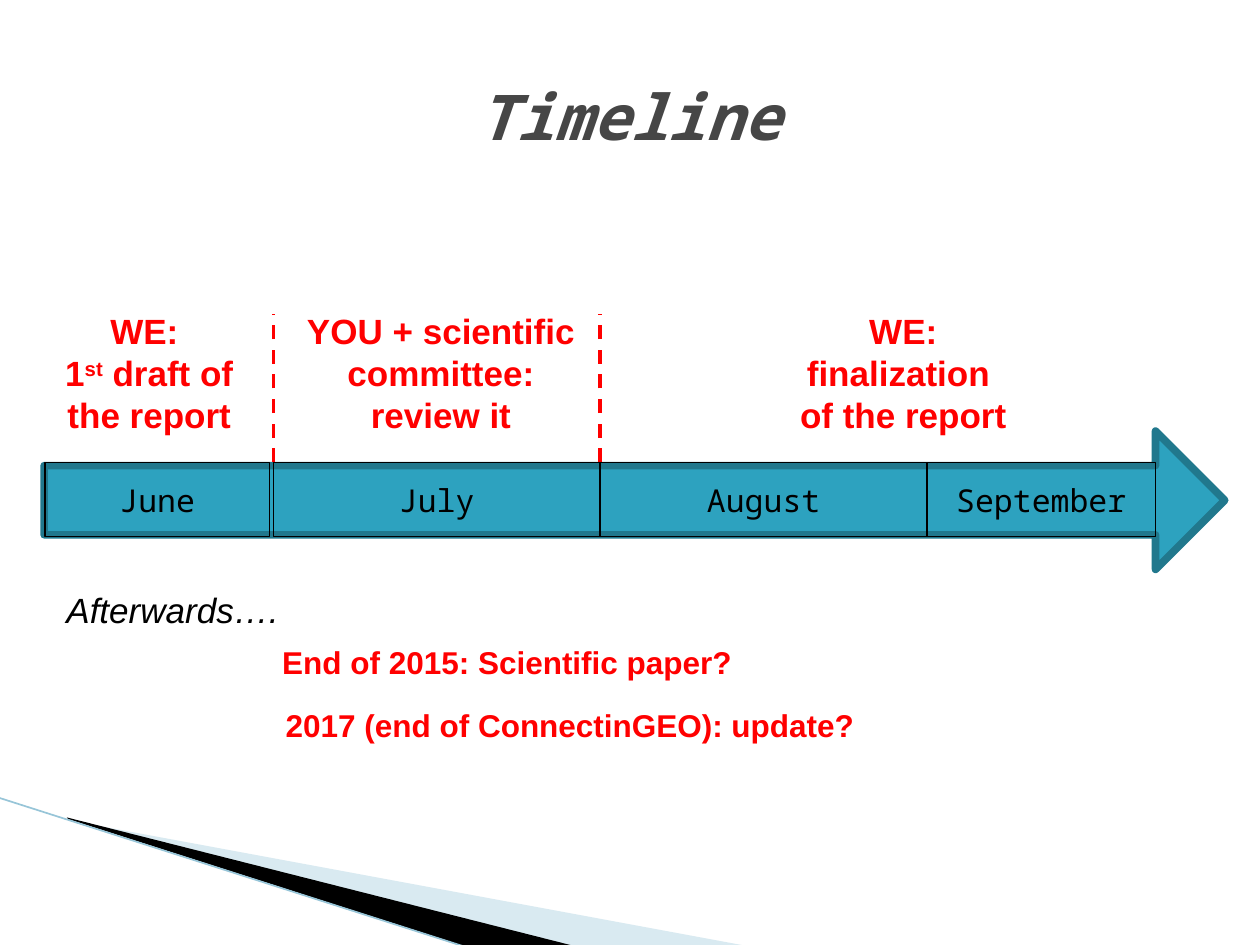
from dataclasses import dataclass

from lxml import etree
from pptx import Presentation
from pptx import util as u
from pptx.dml.color import RGBColor
from pptx.enum import dml, shapes, text
from pptx.oxml import ns

RED, BLACK = "FF0000", "000000"
SANS, MONO = "Arial", "Noto Sans Mono"
BAR_TOP, BAR_HEIGHT = 9.32, 1.5
JULY_LEFT, MONTH_WIDTH = 5.51, 6.59
AUGUST_LEFT = JULY_LEFT + MONTH_WIDTH
SEPTEMBER_LEFT = AUGUST_LEFT + MONTH_WIDTH


@dataclass
class Style:
    size: float
    font: str = SANS
    color: str = RED
    bold: bool = False
    italic: bool = False


@dataclass
class Run:
    words: str
    raised: bool = False


@dataclass
class Note:
    left: float
    top: float
    width: float
    height: float
    paragraphs: list[list[Run]]
    style: Style
    align: text.PP_ALIGN = text.PP_ALIGN.LEFT


@dataclass
class Month:
    name: str
    left: float
    width: float


@dataclass
class Wedge:
    points: list[tuple[float, float]]
    color: str
    opacity: int = 100


def paint(color_format, value: str) -> None:
    color_format.rgb = RGBColor.from_string(value)


def fill_solid(shape, value: str) -> None:
    shape.fill.solid()
    paint(shape.fill.fore_color, value)


def outline(line, value: str, width: float) -> None:
    paint(line.color, value)
    line.width = u.Pt(width)


def write(frame, paragraphs: list[list[Run]], style: Style, align: text.PP_ALIGN) -> None:
    frame.word_wrap = True
    for index, runs in enumerate(paragraphs):
        paragraph = frame.paragraphs[0] if index == 0 else frame.add_paragraph()
        paragraph.alignment = align
        for part in runs:
            run = paragraph.add_run()
            run.text = part.words
            font = run.font
            font.name, font.size = style.font, u.Pt(style.size)
            font.bold, font.italic = style.bold, style.italic
            paint(font.color, style.color)
            if part.raised:
                run._r.get_or_add_rPr().set("baseline", "30000")


def draw_wedge(slide, wedge: Wedge) -> None:
    points = [(u.Cm(x), u.Cm(y)) for x, y in wedge.points]
    builder = slide.shapes.build_freeform(*points[0])
    builder.add_line_segments(points[1:], close=True)
    shape = builder.convert_to_shape()
    shape.shadow.inherit = False
    fill_solid(shape, wedge.color)
    shape.line.fill.background()
    if wedge.opacity < 100:
        color = shape._element.spPr.find(".//" + ns.qn("a:srgbClr"))
        etree.SubElement(color, ns.qn("a:alpha")).set("val", str(wedge.opacity * 1000))


def draw_line(slide, start: tuple[float, float], end: tuple[float, float],
              color: str, width: float, dashed: bool = False) -> None:
    ends = [u.Cm(value) for value in (*start, *end)]
    connector = slide.shapes.add_connector(shapes.MSO_CONNECTOR.STRAIGHT, *ends)
    outline(connector.line, color, width)
    if dashed:
        connector.line.dash_style = dml.MSO_LINE.DASH
    etree.SubElement(connector._element.spPr, ns.qn("a:effectLst"))


def draw_note(slide, note: Note) -> None:
    box = slide.shapes.add_textbox(u.Cm(note.left), u.Cm(note.top),
                                   u.Cm(note.width), u.Cm(note.height))
    write(box.text_frame, note.paragraphs, note.style, note.align)


def draw_arrow(slide) -> None:
    arrow = slide.shapes.add_shape(shapes.MSO_SHAPE.RIGHT_ARROW, u.Cm(0.89),
                                   u.Cm(8.69), u.Cm(23.8), u.Cm(2.79))
    arrow.shadow.inherit = False
    fill_solid(arrow, "2DA2BF")
    outline(arrow.line, "21788D", 4.33)


def draw_month(slide, month: Month) -> None:
    cell = slide.shapes.add_shape(shapes.MSO_SHAPE.RECTANGLE, u.Cm(month.left),
                                  u.Cm(BAR_TOP), u.Cm(month.width), u.Cm(BAR_HEIGHT))
    cell.shadow.inherit = False
    cell.fill.background()
    outline(cell.line, BLACK, 0.75)
    cell.text_frame.vertical_anchor = text.MSO_ANCHOR.MIDDLE
    write(cell.text_frame, [[Run(month.name)]], Style(18, MONO, BLACK),
          text.PP_ALIGN.CENTER)


def draw_title(slide) -> None:
    title = slide.shapes.title
    title.left, title.top = u.Cm(1.27), u.Cm(0.74)
    title.width, title.height = u.Cm(22.86), u.Cm(3.18)
    title.text_frame.vertical_anchor = text.MSO_ANCHOR.MIDDLE
    write(title.text_frame, [[Run("Timeline")]],
          Style(36, MONO, "464646", bold=True, italic=True), text.PP_ALIGN.CENTER)


TASK_STYLE = Style(20, bold=True)
LATER_STYLE = Style(18, bold=True)
CENTER = text.PP_ALIGN.CENTER

WEDGES = [
    Wedge([(1.4, 16.54), (15.11, 19.08), (11.58, 19.08), (1.4, 16.51)], "A0CBDC", 40),
    Wedge([(1.35, 16.48), (11.61, 19.08), (9.45, 19.1), (1.37, 16.51)], BLACK),
]
MONTHS = [
    Month("June", 0.91, 4.52),
    Month("July", JULY_LEFT, MONTH_WIDTH),
    Month("August", AUGUST_LEFT, MONTH_WIDTH),
    Month("September", SEPTEMBER_LEFT, 4.6),
]
NOTES = [
    Note(0.51, 6.12, 5, 2.82,
         [[Run("WE: ")], [Run("1"), Run("st", raised=True), Run(" draft of the report")]],
         TASK_STYLE, CENTER),
    Note(5.69, 6.12, 6.4, 2.82,
         [[Run("YOU + scientific committee:")], [Run("review it")]], TASK_STYLE, CENTER),
    Note(14.91, 6.12, 6.6, 2.82,
         [[Run("WE:")], [Run("finalization ")], [Run("of the report")]], TASK_STYLE, CENTER),
    Note(1.09, 11.73, 6.8, 1.12, [[Run("Afterwards….")]],
         Style(20, color=BLACK, italic=True)),
    Note(5.44, 12.83, 19.5, 1.02, [[Run("End of 2015: Scientific paper?")]], LATER_STYLE),
    Note(5.51, 14.1, 19.5, 1.02, [[Run("2017 (end of ConnectinGEO): update?")]], LATER_STYLE),
]


def main() -> None:
    deck = Presentation()
    deck.slide_width, deck.slide_height = u.Cm(25.4), u.Cm(19.05)
    slide = deck.slides.add_slide(deck.slide_layouts[5])
    for wedge in WEDGES:
        draw_wedge(slide, wedge)
    draw_line(slide, (-0.03, 16.08), (9.42, 19.1), "97C5D8", 0.95)
    draw_title(slide)
    draw_arrow(slide)
    for month in MONTHS:
        draw_month(slide, month)
    for divider in (JULY_LEFT, AUGUST_LEFT):
        draw_line(slide, (divider, BAR_TOP), (divider, 6.32), RED, 2, dashed=True)
    for note in NOTES:
        draw_note(slide, note)
    deck.save("out.pptx")


if __name__ == "__main__":
    main()
